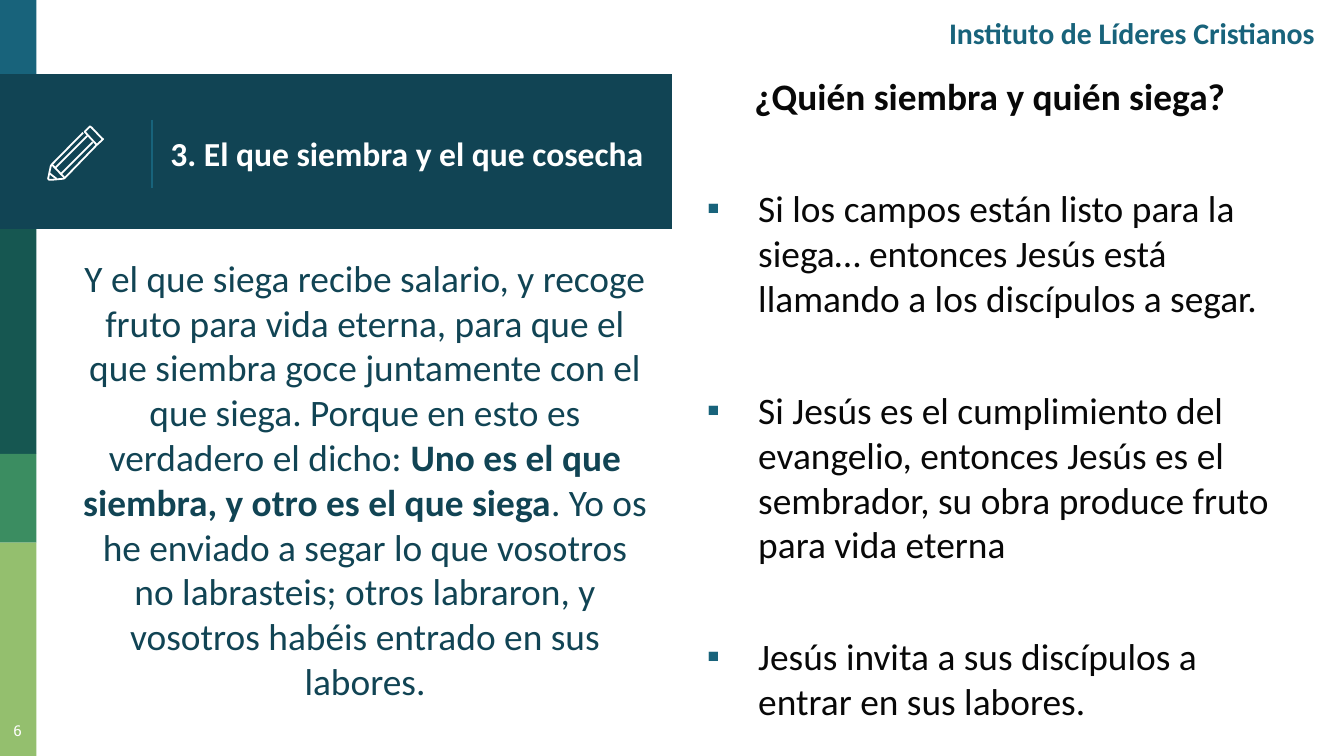
from itertools import pairwise

from lxml.etree import SubElement
from pptx import Presentation
from pptx.dml.color import RGBColor
from pptx.enum.shapes import MSO_CONNECTOR, MSO_SHAPE
from pptx.enum.text import MSO_ANCHOR, MSO_AUTO_SIZE, PP_ALIGN
from pptx.oxml.ns import qn
from pptx.util import Cm, Pt

COLORS = {
    "blue": "18637B",
    "navy": "114454",
    "teal": "165751",
    "green": "3B8D61",
    "lime": "94BF6E",
    "white": "FFFFFF",
    "black": "080808",
}
BAND_EDGES = [0, 1.4, 4.33, 8.58, 10.26, 14.29]
BAND_COLORS = ["blue", "navy", "teal", "green", "lime"]
STRIP_WIDTH = 0.69
BANNER_WIDTH = 12.7

PENCIL_STROKES = [
    [(193, 262), (173, 241), (170, 239), (168, 241), (160, 249), (183, 274),
     (193, 265), (195, 263), (193, 262)],
    [(175, 269), (114, 330)],
    [(157, 251), (97, 312), (96, 314), (91, 338), (93, 340), (97, 340),
     (119, 338), (122, 337), (183, 274)],
    [(104, 318), (165, 257)],
    [(107, 338), (94, 328)],
    [(97, 312), (99, 312), (121, 335), (121, 337)],
]

VERSE = [
    ("Y el que siega recibe salario, y recoge fruto para vida eterna, para que el "
     "que siembra goce juntamente con el que siega. Porque en esto es verdadero el "
     "dicho: ", False),
    ("Uno es el que siembra, y otro es el que siega", True),
    (". Yo os he enviado a segar lo que vosotros no labrasteis; otros labraron, y "
     "vosotros habéis entrado en sus labores.", False),
]
QUESTION = "¿Quién siembra y quién siega?"
ANSWERS = [
    "Si los campos están listo para la siega… entonces Jesús está llamando a los "
    "discípulos a segar.",
    "Si Jesús es el cumplimiento del evangelio, entonces Jesús es el sembrador, su "
    "obra produce fruto para vida eterna",
    "Jesús invita a sus discípulos a entrar en sus labores.",
]


class SlideBuilder:
    font = "Calibri"
    inset = Cm(0.25)

    def __init__(self, page):
        self.page = page

    def color(self, name):
        return RGBColor.from_string(COLORS[name])

    def band(self, top, bottom, width, color):
        box = self.page.shapes.add_shape(
            MSO_SHAPE.RECTANGLE, 0, Cm(top), Cm(width), Cm(bottom - top))
        box.shadow.inherit = False
        box.fill.solid()
        box.fill.fore_color.rgb = self.color(color)
        box.line.fill.background()

    def divider(self, x, top, bottom, color):
        line = self.page.shapes.add_connector(
            MSO_CONNECTOR.STRAIGHT, Cm(x), Cm(top), Cm(x), Cm(bottom))
        line.line.color.rgb = self.color(color)
        line.line.width = Pt(0.75)
        SubElement(line._element.spPr, qn("a:effectLst"))

    def stroke(self, points, color):
        builder = self.page.shapes.build_freeform(*points[0], scale=Cm(0.01))
        builder.add_line_segments(points[1:], close=points[0] == points[-1])
        outline = builder.convert_to_shape()
        outline.shadow.inherit = False
        outline.fill.background()
        outline.line.color.rgb = self.color(color)
        outline.line.width = Pt(0.96)

    def frame(self, box, left, top, width, height, anchor=MSO_ANCHOR.TOP):
        box.left, box.top, box.width, box.height = map(Cm, (left, top, width, height))
        frame = box.text_frame
        frame.word_wrap = True
        frame.auto_size = MSO_AUTO_SIZE.NONE
        frame.vertical_anchor = anchor
        frame.margin_left = frame.margin_right = self.inset
        frame.margin_top = frame.margin_bottom = self.inset
        return frame

    def text_box(self, left, top, width, height):
        box = self.page.shapes.add_textbox(0, 0, 0, 0)
        return self.frame(box, left, top, width, height)

    def fill_text(self, para, spans, size, color, align=PP_ALIGN.LEFT, bold=False,
                  before=0, font=None):
        para.alignment = align
        para.space_before = Pt(before)
        para.font.name = font or self.font
        para.font.size = Pt(size)
        para.font.color.rgb = self.color(color)
        if isinstance(spans, str):
            para.font.bold = bold
            para.add_run().text = spans
            return
        for text, strong in spans:
            span = para.add_run()
            span.text = text
            span.font.bold = strong

    def bullet(self, para, color=None):
        props = para._p.get_or_add_pPr()
        indent = Cm(0.97) if color else 0
        props.set("marL", str(indent))
        props.set("indent", str(-indent))
        if color:
            tint = SubElement(props, qn("a:buClr"))
            SubElement(tint, qn("a:srgbClr"), val=COLORS[color])
            SubElement(props, qn("a:buChar"), char="▪")
        else:
            SubElement(props, qn("a:buNone"))


def main():
    deck = Presentation()
    deck.slide_width, deck.slide_height = Cm(25.4), Cm(14.29)
    page = deck.slides.add_slide(deck.slide_layouts[1])
    title, body = page.placeholders
    slide = SlideBuilder(page)

    for (top, bottom), color in zip(pairwise(BAND_EDGES), BAND_COLORS):
        width = BANNER_WIDTH if color == "navy" else STRIP_WIDTH
        slide.band(top, bottom, width, color)
    slide.divider(2.87, 2.26, 3.56, "blue")
    for points in PENCIL_STROKES:
        slide.stroke(points, "white")

    heading = slide.frame(title, 2.97, 1.47, 10.72, 2.84, MSO_ANCHOR.MIDDLE)
    slide.fill_text(heading.paragraphs[0], "3. El que siembra y el que cosecha", 18,
                    "white", bold=True)
    page.shapes._spTree.append(title._element)

    number = slide.text_box(-0.15, 13.39, 0.97, 0.89)
    slide.fill_text(number.paragraphs[0], "6", 8, "white", PP_ALIGN.CENTER,
                    font="Roboto Slab")

    school = slide.text_box(15.7, 0.02, 9.4, 1.55)
    slide.fill_text(school.paragraphs[0], "Instituto de Líderes Cristianos", 16,
                    "blue", PP_ALIGN.RIGHT, bold=True)

    verse = slide.text_box(1.3, 4.57, 11.2, 8.76)
    slide.fill_text(verse.paragraphs[0], VERSE, 20, "navy", PP_ALIGN.CENTER)

    answers = slide.frame(body, 13.11, 1.14, 11.2, 11.79)
    question = answers.paragraphs[0]
    slide.bullet(question)
    slide.fill_text(question, QUESTION, 20, "black", PP_ALIGN.CENTER, bold=True)
    for answer in ANSWERS:
        para = answers.add_paragraph()
        slide.bullet(para, "blue")
        slide.fill_text(para, answer, 20, "black", before=36)

    deck.save("out.pptx")


if __name__ == "__main__":
    main()
